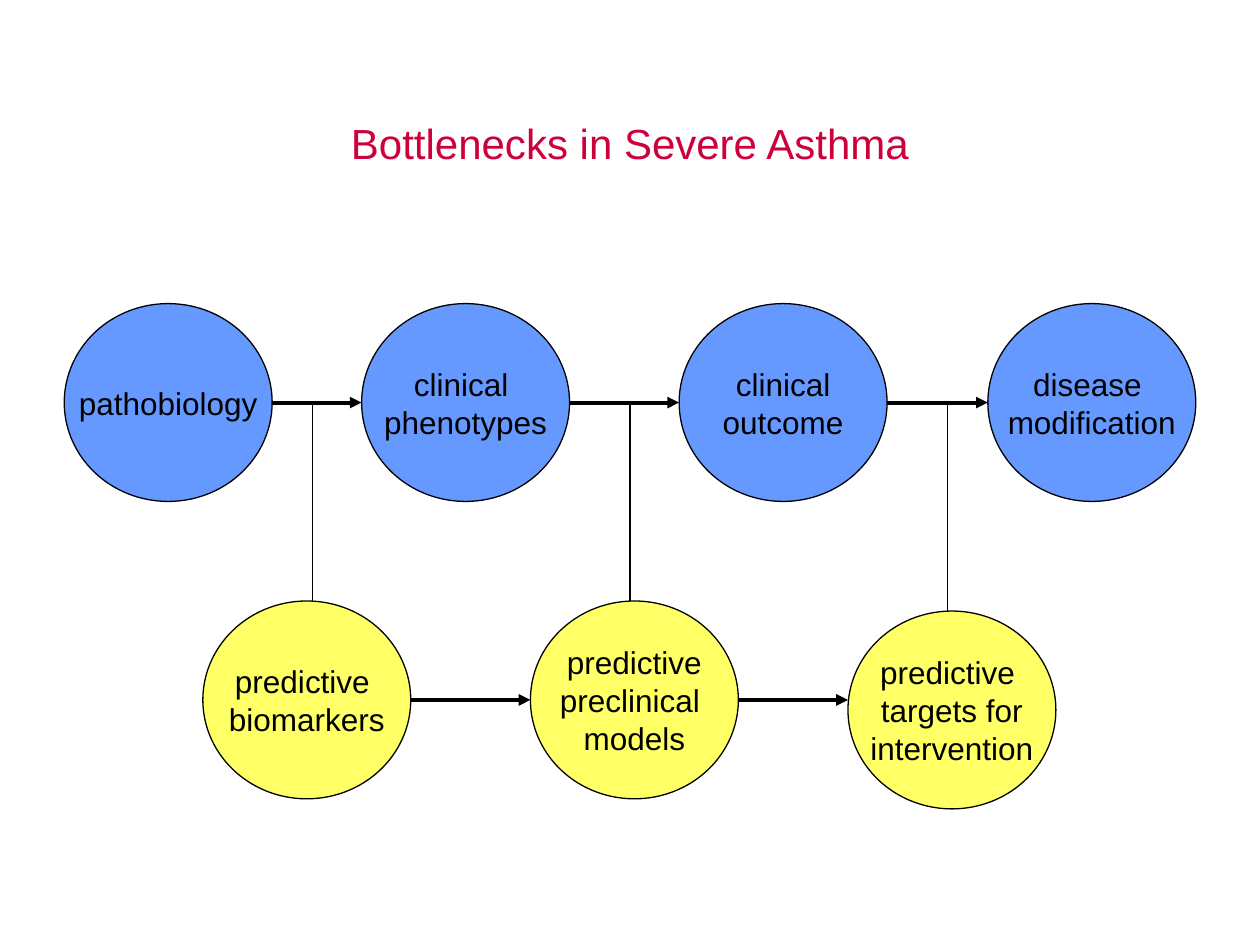
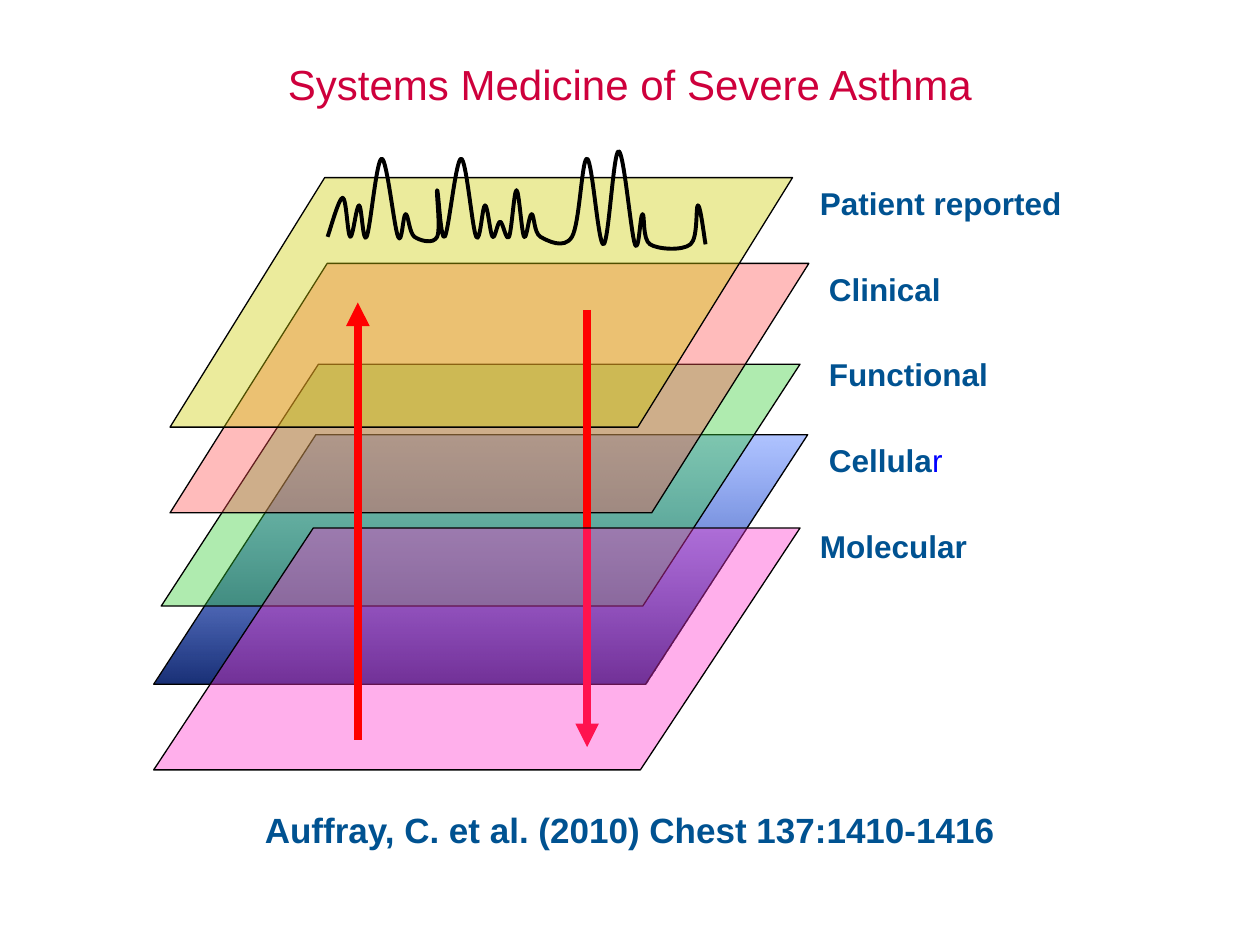
from dataclasses import dataclass
from typing import Optional

from lxml import etree
from pptx import Presentation
from pptx.dml.color import RGBColor
from pptx.enum.shapes import MSO_CONNECTOR as Connector, MSO_SHAPE as Preset
from pptx.enum.text import MSO_ANCHOR as Anchor, PP_ALIGN as Align
from pptx.oxml.ns import qn
from pptx.util import Inches, Pt


@dataclass(frozen=True)
class Theme:
    font: str = "Arial"
    title: str = "CE003C"
    accent: str = "005291"
    ink: str = "000000"
    outcome: str = "6699FF"
    predictor: str = "FFFF66"
    link: str = "0000FF"
    arrow: str = "FF0000"
    cellular_top: str = "3366FF"
    cellular_bottom: str = "182F76"
    title_size: float = 24
    citation_size: float = 20
    body_size: float = 18
    thin: float = 0.75
    medium: float = 2.25
    thick: float = 4.5
    opacity: int = 39


THEME = Theme()


@dataclass(frozen=True)
class Circle:
    left: float
    top: float
    lines: tuple[str, ...]
    color: str
    width: float = 1.65
    height: float = 1.57

    @property
    def right(self) -> float:
        return self.left + self.width

    @property
    def middle(self) -> float:
        return self.top + self.height / 2


@dataclass(frozen=True)
class Layer:
    left: float
    top: float
    width: float
    height: float
    slant: float
    color: Optional[str] = None


OUTCOMES = [
    Circle(left, 2.41, lines, THEME.outcome)
    for left, lines in (
        (0.51, ("pathobiology",)),
        (2.87, ("clinical ", "phenotypes")),
        (5.39, ("clinical", "outcome")),
        (7.84, ("disease ", "modification")),
    )
]
PREDICTORS = [
    Circle(left, top, lines, THEME.predictor)
    for left, top, lines in (
        (1.61, 4.77, ("predictive ", "biomarkers")),
        (4.21, 4.77, ("predictive", "preclinical ", "models")),
        (6.73, 4.85, ("predictive ", "targets for", "intervention")),
    )
]
BACK_LAYERS = (
    Layer(1.22, 3.45, 5.19, 1.98, 0.65),
    Layer(1.28, 2.89, 5.07, 1.92, 0.65, "33CC33"),
    Layer(1.35, 2.09, 5.07, 1.98, 0.63, "FF5050"),
    Layer(1.35, 1.41, 4.94, 1.98, 0.62, "CCCC00"),
)
MOLECULAR_LAYER = Layer(1.22, 4.19, 5.13, 1.92, 0.66, "FF33CC")
LEVELS = (
    (6.41, ("Patient reported",)),
    (6.48, ("Clinical",)),
    (6.48, ("Functional",)),
    (6.48, ("Cellula", "r")),
    (6.41, ("Molecular",)),
)
SIGNAL = (
    (2.6, 1.88), (2.72, 1.57), (2.78, 1.88), (2.85, 1.63), (2.91, 1.88), (3.03, 1.26),
    (3.16, 1.88), (3.22, 1.7), (3.29, 1.88), (3.47, 1.88), (3.47, 1.51), (3.53, 1.88),
    (3.66, 1.26), (3.78, 1.88), (3.85, 1.63), (3.91, 1.88), (3.97, 1.76), (4.04, 1.88),
    (4.1, 1.51), (4.16, 1.88), (4.22, 1.7), (4.29, 1.88), (4.54, 1.88), (4.66, 1.26),
    (4.79, 1.94), (4.91, 1.2), (5.04, 1.94), (5.1, 1.7), (5.16, 1.94), (5.48, 1.94),
    (5.54, 1.63), (5.6, 1.94),
)


def rgb(color: str) -> RGBColor:
    return RGBColor.from_string(color)


def set_font(para, size: float, color: str, bold: bool = False) -> None:
    para.font.name = THEME.font
    para.font.size = Pt(size)
    para.font.bold = bold
    para.font.color.rgb = rgb(color)


def set_outline(shape, color: str, weight: float) -> None:
    shape.line.color.rgb = rgb(color)
    shape.line.width = Pt(weight)


def set_opacity(color_parent, percent: int) -> None:
    for color in color_parent.iter(qn("a:srgbClr")):
        etree.SubElement(color, qn("a:alpha")).set("val", str(percent * 1000))


def add_text(page, left: float, top: float, width: float, height: float,
             parts: tuple[str, ...], size: float, color: str, bold: bool = False,
             align=Align.LEFT, anchor=Anchor.TOP, wrap: bool = True):
    box = page.shapes.add_textbox(Inches(left), Inches(top), Inches(width), Inches(height))
    box.text_frame.word_wrap = wrap
    box.text_frame.vertical_anchor = anchor
    para = box.text_frame.paragraphs[0]
    para.alignment = align
    set_font(para, size, color, bold)
    for part in parts:
        para.add_run().text = part
    return box


def add_title(page, top: float, text: str) -> None:
    add_text(page, 0.5, top, 9, 1.07, (text,), THEME.title_size, THEME.title,
             align=Align.CENTER, anchor=Anchor.MIDDLE)


def add_line(page, start: tuple[float, float], end: tuple[float, float],
             weight: float, color: str = THEME.ink, arrow: bool = False) -> None:
    line = page.shapes.add_connector(Connector.STRAIGHT, *map(Inches, start + end))
    set_outline(line, color, weight)
    if arrow:
        etree.SubElement(line.line._get_or_add_ln(), qn("a:tailEnd")).set("type", "triangle")
    etree.SubElement(line._element.spPr, qn("a:effectLst"))


def add_preset(page, preset, item):
    shape = page.shapes.add_shape(preset, Inches(item.left), Inches(item.top),
                                  Inches(item.width), Inches(item.height))
    shape.shadow.inherit = False
    set_outline(shape, THEME.ink, THEME.thin)
    return shape


def add_circle(page, circle: Circle) -> None:
    shape = add_preset(page, Preset.OVAL, circle)
    shape.fill.solid()
    shape.fill.fore_color.rgb = rgb(circle.color)
    frame = shape.text_frame
    frame.word_wrap = False
    frame.vertical_anchor = Anchor.MIDDLE
    frame.text = "\n".join(circle.lines)
    for para in frame.paragraphs:
        para.alignment = Align.CENTER
        set_font(para, THEME.body_size, THEME.ink)


def add_layer(page, layer: Layer) -> None:
    shape = add_preset(page, Preset.PARALLELOGRAM, layer)
    shape.adjustments[0] = layer.slant
    if layer.color:
        shape.fill.solid()
        shape.fill.fore_color.rgb = rgb(layer.color)
        set_opacity(shape._element.spPr.find(qn("a:solidFill")), THEME.opacity)
        return
    shape.fill.gradient()
    shape.fill.gradient_angle = 270
    top, bottom = shape.fill.gradient_stops
    top.position, bottom.position = 0, 1
    top.color.rgb = rgb(THEME.cellular_top)
    bottom.color.rgb = rgb(THEME.cellular_bottom)
    set_opacity(next(shape._element.spPr.iter(qn("a:gs"))), THEME.opacity)


def smooth_segments(shape) -> None:
    segments = list(shape._element.iter(qn("a:lnTo")))
    knots = [(int(point.get("x")), int(point.get("y")))
             for point in shape._element.iter(qn("a:pt"))]
    padded = [knots[0], *knots, knots[-1]]
    for segment, *around in zip(segments, padded, padded[1:], padded[2:], padded[3:]):
        before, start, end, after = around
        leave = [s + (e - b) / 6 for b, s, e in zip(before, start, end)]
        arrive = [e - (a - s) / 6 for s, e, a in zip(start, end, after)]
        segment.tag = qn("a:cubicBezTo")
        for index, (x, y) in enumerate((leave, arrive)):
            point = etree.Element(qn("a:pt"), x=str(round(x)), y=str(round(y)))
            segment.insert(index, point)


def add_signal(page) -> None:
    knots = [(Inches(x), Inches(y)) for x, y in SIGNAL]
    builder = page.shapes.build_freeform(*knots[0])
    builder.add_line_segments(knots[1:], close=False)
    signal = builder.convert_to_shape()
    signal.shadow.inherit = False
    signal.fill.background()
    set_outline(signal, THEME.ink, THEME.medium)
    smooth_segments(signal)


def draw_bottlenecks(page) -> None:
    add_title(page, 0.6, "Bottlenecks in Severe Asthma")
    for circle in OUTCOMES + PREDICTORS:
        add_circle(page, circle)
    for row in (OUTCOMES, PREDICTORS):
        for source, target in zip(row, row[1:]):
            add_line(page, (source.right, source.middle), (target.left, source.middle),
                     THEME.medium, arrow=True)
    for index, predictor in enumerate(PREDICTORS):
        x = 2.48 + 2.52 * index
        add_line(page, (x, OUTCOMES[0].middle), (x, predictor.top), THEME.thin)


def draw_systems_medicine(page) -> None:
    add_title(page, 0.13, "Systems Medicine of Severe Asthma")
    add_text(page, 0.5, 6.37, 9, 0.63, ("Auffray, C. et al. (2010) Chest 137:1410-1416",),
             THEME.citation_size, THEME.accent, bold=True, align=Align.CENTER)
    for layer in BACK_LAYERS:
        add_layer(page, layer)
    add_line(page, (4.66, 2.46), (4.66, 5.93), THEME.thick, THEME.arrow, arrow=True)
    add_layer(page, MOLECULAR_LAYER)
    for index, (left, parts) in enumerate(LEVELS):
        box = add_text(page, left, 1.41 + 0.68 * index, 2.44, 0.46, parts,
                       THEME.body_size, THEME.accent, bold=True, wrap=False)
        for span in box.text_frame.paragraphs[0].runs[1:]:
            span.font.bold = False
            span.font.color.rgb = rgb(THEME.link)
    add_signal(page)
    add_line(page, (2.84, 5.87), (2.84, 2.4), THEME.thick, THEME.arrow, arrow=True)


def main() -> None:
    deck = Presentation()
    deck.slide_width, deck.slide_height = Inches(10), Inches(7.5)
    for draw in (draw_bottlenecks, draw_systems_medicine):
        draw(deck.slides.add_slide(deck.slide_layouts[6]))
    deck.save("out.pptx")


if __name__ == "__main__":
    main()
